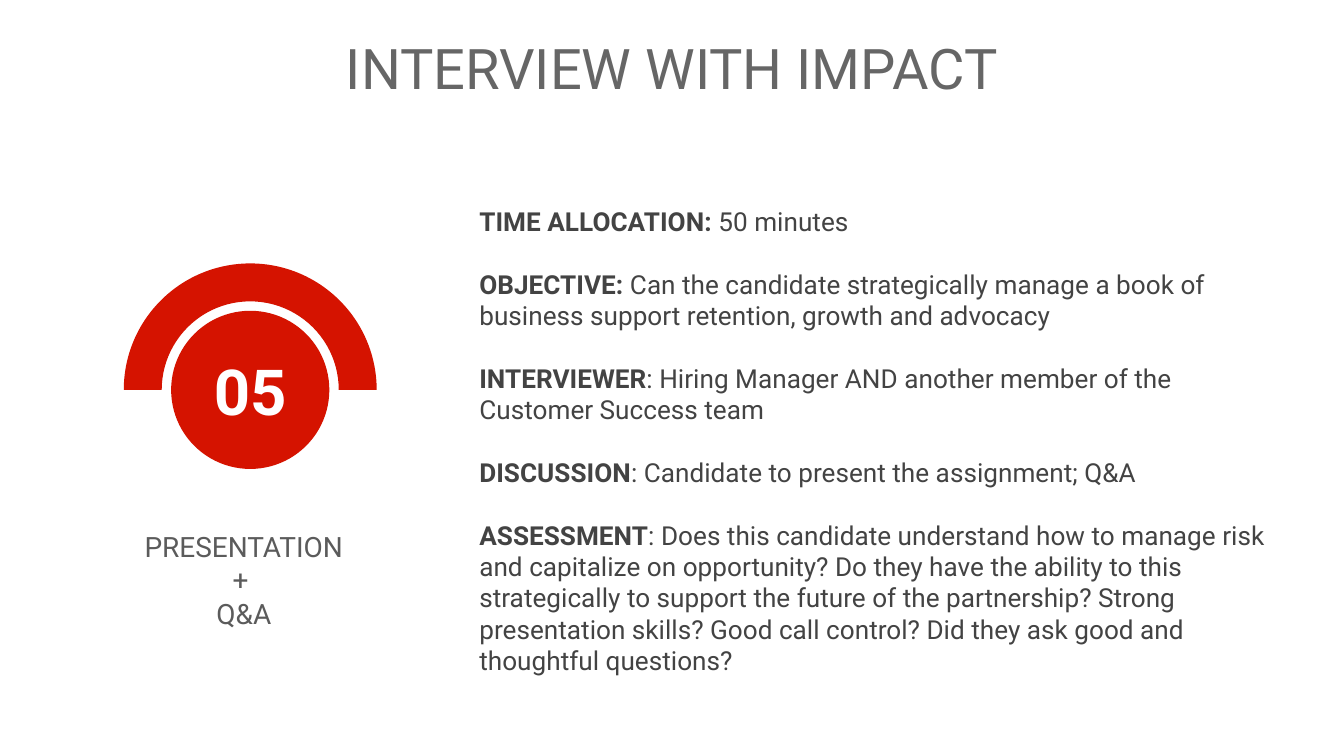
from dataclasses import dataclass

from pptx import Presentation
from pptx.dml.color import RGBColor
from pptx.enum.shapes import MSO_SHAPE as Shape
from pptx.enum.text import MSO_ANCHOR as Anchor, PP_ALIGN as Align
from pptx.util import Cm, Pt


@dataclass(frozen=True)
class Theme:
    font: str = "Roboto"
    red: RGBColor = RGBColor(0xD5, 0x13, 0x00)
    white: RGBColor = RGBColor(0xFF, 0xFF, 0xFF)
    title: RGBColor = RGBColor(0x66, 0x66, 0x66)
    caption: RGBColor = RGBColor(0x5B, 0x5B, 0x5B)
    body: RGBColor = RGBColor(0x43, 0x43, 0x43)
    title_size: Pt = Pt(30)
    number_size: Pt = Pt(34)
    caption_size: Pt = Pt(15)
    body_size: Pt = Pt(14)
    body_gap: Pt = Pt(16.8)


THEME = Theme()

DETAILS = [
    ("TIME ALLOCATION:", " 50 minutes"),
    ("OBJECTIVE:", " Can the candidate strategically manage a book of business "
     "support retention, growth and advocacy"),
    ("INTERVIEWER", ": Hiring Manager AND another member of the Customer Success team"),
    ("DISCUSSION", ": Candidate to present the assignment; Q&A"),
    ("ASSESSMENT", ": Does this candidate understand how to manage risk and "
     "capitalize on opportunity? Do they have the ability to this strategically "
     "to support the future of the partnership? Strong presentation skills? "
     "Good call control? Did they ask good and thoughtful questions?"),
]


def set_frame(shape, inset_x, inset_y, anchor):
    frame = shape.text_frame
    frame.word_wrap = True
    frame.vertical_anchor = anchor
    frame.margin_left = frame.margin_right = inset_x
    frame.margin_top = frame.margin_bottom = inset_y
    return frame


def style(paragraph, size, color, align=Align.CENTER):
    paragraph.alignment = align
    paragraph.font.name = THEME.font
    paragraph.font.size = size
    paragraph.font.color.rgb = color


def add_red_shape(slide, kind, left, top, size):
    shape = slide.shapes.add_shape(kind, left, top, size, size)
    shape.shadow.inherit = False
    shape.fill.solid()
    shape.fill.fore_color.rgb = THEME.red
    shape.line.fill.background()
    return shape


def add_title(slide, left, top, width, height, text):
    box = slide.shapes.add_textbox(left, top, width, height)
    frame = set_frame(box, Cm(0.25), Cm(0.25), Anchor.TOP)
    frame.text = text
    style(frame.paragraphs[0], THEME.title_size, THEME.title)


def add_badge(slide, left, top, size, number):
    """Numbered disc under a half ring that shares its centre."""
    disc_size = Cm(2.99)
    offset = (size - disc_size) // 2
    disc = add_red_shape(slide, Shape.OVAL, left + offset, top + offset, disc_size)
    frame = set_frame(disc, 0, 0, Anchor.MIDDLE)
    frame.text = number
    style(frame.paragraphs[0], THEME.number_size, THEME.white)
    frame.paragraphs[0].font.bold = True

    arch = add_red_shape(slide, Shape.BLOCK_ARC, left, top, size)
    arch.adjustments[2] = 0.15


def add_caption(slide, left, top, width, height, text):
    box = slide.shapes.add_textbox(left, top, width, height)
    frame = set_frame(box, Cm(0.1), Cm(0.05), Anchor.BOTTOM)
    frame.text = text
    for paragraph in frame.paragraphs:
        style(paragraph, THEME.caption_size, THEME.caption)


def add_details(slide, left, top, width, height, details):
    box = slide.shapes.add_textbox(left, top, width, height)
    frame = set_frame(box, Cm(0.25), Cm(0.25), Anchor.TOP)
    for index, (label, description) in enumerate(details):
        paragraph = frame.add_paragraph() if index else frame.paragraphs[0]
        style(paragraph, THEME.body_size, THEME.body, Align.LEFT)
        paragraph.space_before = THEME.body_gap if index else Pt(0)
        label_run = paragraph.add_run()
        label_run.text = label
        label_run.font.bold = True
        paragraph.add_run().text = description


def main():
    presentation = Presentation()
    presentation.slide_width = Cm(25.4)
    presentation.slide_height = Cm(14.29)
    slide = presentation.slides.add_slide(presentation.slide_layouts[6])

    add_badge(slide, Cm(2.34), Cm(4.98), Cm(4.78), "05")
    add_caption(slide, Cm(2.59), Cm(9.93), Cm(4.04), Cm(2.03), "PRESENTATION + \nQ&A")
    add_title(slide, 0, Cm(0.38), presentation.slide_width, Cm(1.8),
              "INTERVIEW WITH IMPACT")
    add_details(slide, Cm(8.81), Cm(3.63), Cm(15.42), Cm(10.08), DETAILS)

    presentation.save("out.pptx")


if __name__ == "__main__":
    main()
